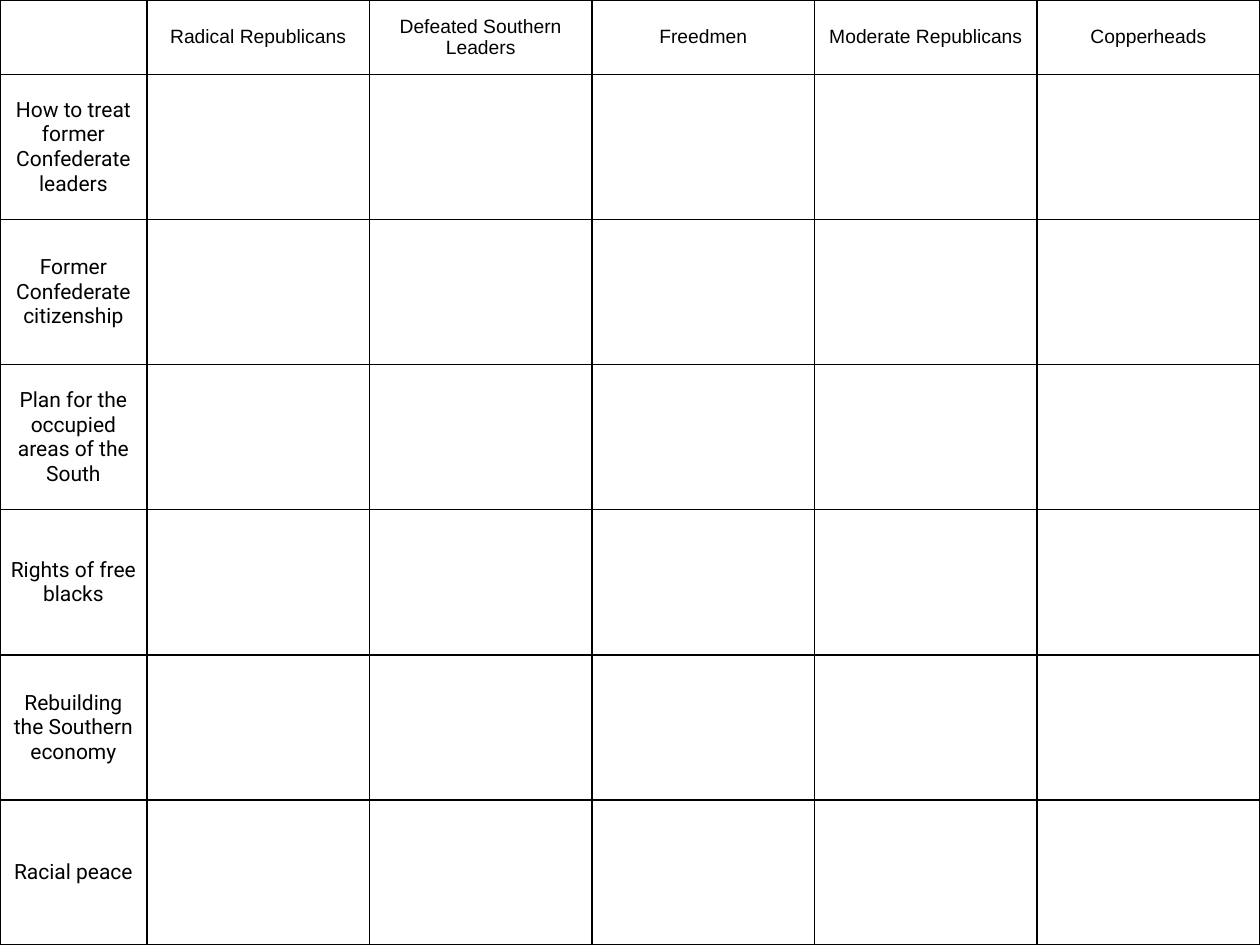
from lxml.etree import SubElement
from pptx import Presentation
from pptx.dml.color import RGBColor
from pptx.enum.text import MSO_ANCHOR, PP_ALIGN
from pptx.oxml.ns import qn
from pptx.util import Cm, Pt

COLORS = {"ink": "000000", "paper": "FFFFFF"}
SLIDE_W, SLIDE_H = 25.4, 19.05
TOPIC_W, HEADER_H = 2.96, 1.5
BORDER = Pt(1)

GROUPS = ["Radical Republicans", "Defeated Southern Leaders", "Freedmen",
          "Moderate Republicans", "Copperheads"]
TOPICS = ["How to treat former Confederate leaders",
          "Former Confederate citizenship",
          "Plan for the occupied areas of the South",
          "Rights of free blacks",
          "Rebuilding the Southern economy",
          "Racial peace"]


def add_borders(cell):
    properties = cell._tc.get_or_add_tcPr()
    for position, side in enumerate(("a:lnL", "a:lnR", "a:lnT", "a:lnB")):
        line = properties.makeelement(qn(side), {"w": str(int(BORDER))})
        fill = SubElement(line, qn("a:solidFill"))
        SubElement(fill, qn("a:srgbClr"), val=COLORS["ink"])
        # Border lines come before the fill in the cell properties
        properties.insert(position, line)


def style_cell(cell):
    cell.fill.solid()
    cell.fill.fore_color.rgb = RGBColor.from_string(COLORS["paper"])
    cell.vertical_anchor = MSO_ANCHOR.MIDDLE
    cell.margin_left = cell.margin_right = Cm(0.15)
    cell.margin_top = cell.margin_bottom = 0
    add_borders(cell)


def write_label(cell, label, font_name, size):
    paragraph = cell.text_frame.paragraphs[0]
    paragraph.alignment = PP_ALIGN.CENTER
    run = paragraph.add_run()
    run.text = label
    run.font.name = font_name
    run.font.size = Pt(size)
    run.font.color.rgb = RGBColor.from_string(COLORS["ink"])


def add_comparison_grid(slide, left, top, width, height):
    grid = slide.shapes.add_table(len(TOPICS) + 1, len(GROUPS) + 1,
                                  Cm(left), Cm(top), Cm(width), Cm(height)).table
    grid.first_row = grid.horz_banding = False

    # Narrow topic column and low header row; the rest share the space equally
    group_w = (width - TOPIC_W) / len(GROUPS)
    topic_h = (height - HEADER_H) / len(TOPICS)
    for index, column in enumerate(grid.columns):
        column.width = Cm(group_w if index else TOPIC_W)
    for index, row in enumerate(grid.rows):
        row.height = Cm(topic_h if index else HEADER_H)

    for cell in grid.iter_cells():
        style_cell(cell)

    # Header row and topic column
    for column, group in enumerate(GROUPS, start=1):
        write_label(grid.cell(0, column), group, "Arial", 11)
    for row, topic in enumerate(TOPICS, start=1):
        write_label(grid.cell(row, 0), topic, "Roboto", 12)


def main():
    presentation = Presentation()
    presentation.slide_width = Cm(SLIDE_W)
    presentation.slide_height = Cm(SLIDE_H)
    slide = presentation.slides.add_slide(presentation.slide_layouts[6])
    add_comparison_grid(slide, 0, 0, SLIDE_W, SLIDE_H)
    presentation.save("out.pptx")


if __name__ == "__main__":
    main()
